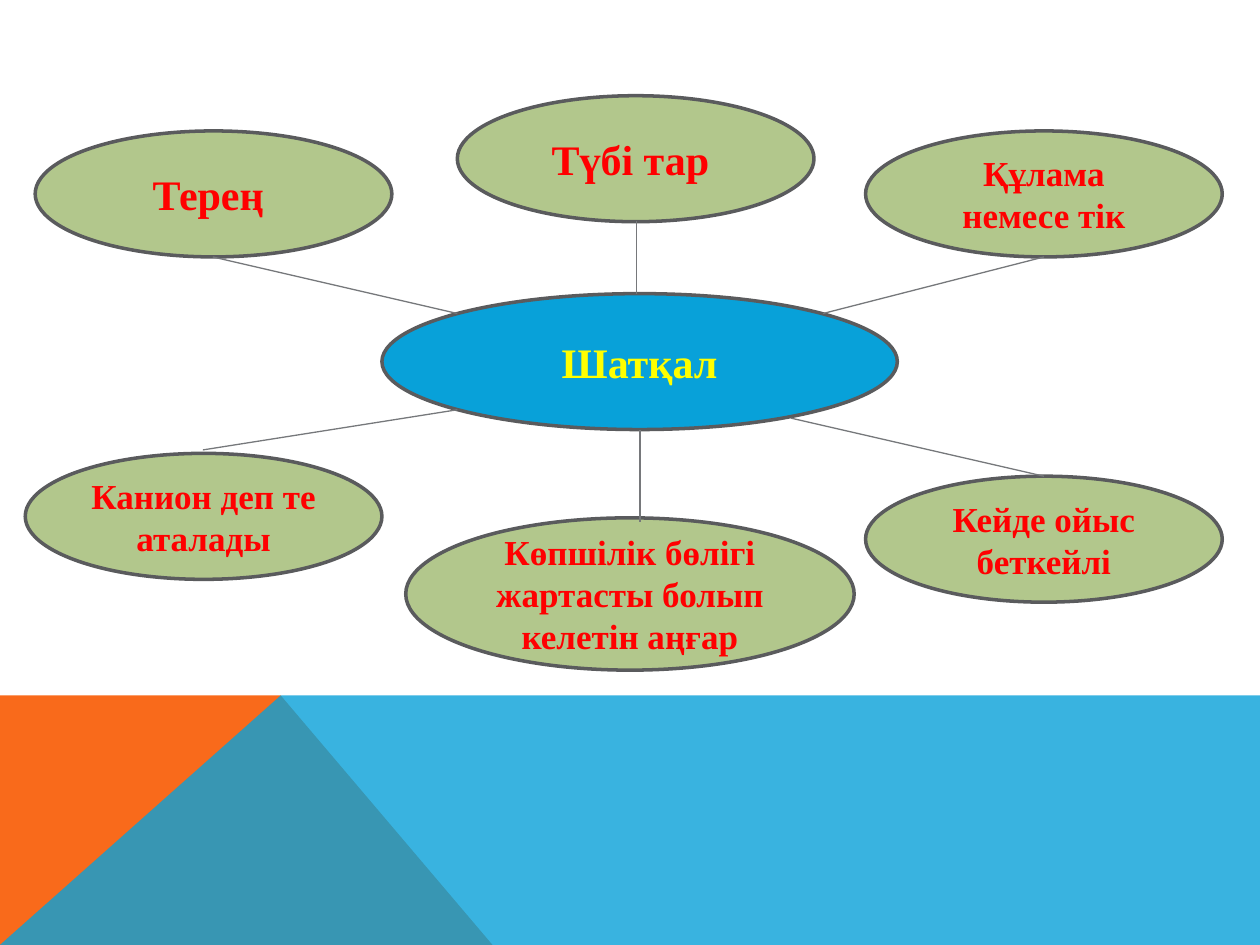
from lxml import etree
from pptx import Presentation
from pptx.dml.color import RGBColor
from pptx.enum.shapes import MSO_CONNECTOR, MSO_SHAPE
from pptx.enum.text import MSO_ANCHOR, MSO_AUTO_SIZE, PP_ALIGN
from pptx.oxml.ns import qn
from pptx.util import Cm, Pt

OVAL = MSO_SHAPE.OVAL
STRAIGHT = MSO_CONNECTOR.STRAIGHT
MIDDLE = MSO_ANCHOR.MIDDLE
CENTER = PP_ALIGN.CENTER
GROW = MSO_AUTO_SIZE.SHAPE_TO_FIT_TEXT

ORANGE = RGBColor(0xF9, 0x6A, 0x1B)
BLUE = RGBColor(0x08, 0xA1, 0xD9)
GREEN = RGBColor(0xB2, 0xC7, 0x8C)
OUTLINE = RGBColor(0x5A, 0x5B, 0x5D)
GRAY = RGBColor(0x76, 0x78, 0x7B)
RED = RGBColor(0xFF, 0x00, 0x00)
YELLOW = RGBColor(0xFF, 0xFF, 0x00)

WIDTH, HEIGHT = 25.4, 19.05
BAND_TOP, PEAK_X = 14.02, 5.66
LEAF_WIDTH, LEAF_HEIGHT = 7.19, 2.54
RIGHT_X, UPPER_Y, LOWER_Y = 17.45, 2.64, 9.6
RIGHT_CENTER = RIGHT_X + LEAF_WIDTH / 2
UPPER_BOTTOM = UPPER_Y + LEAF_HEIGHT


def write(frame, text, size=20, color=RED, font="Times New Roman"):
    frame.word_wrap = True
    paragraph = frame.paragraphs[0]
    paragraph.alignment = CENTER
    run = paragraph.add_run()
    run.text = text
    run.font.name = font
    run.font.size = Pt(size)
    run.font.bold = True
    run.font.color.rgb = color


class ClusterSlide:
    def __init__(self, slide):
        self.shapes = slide.shapes

    def band(self, points, color, opacity=100):
        corners = [(Cm(x), Cm(y)) for x, y in points]
        builder = self.shapes.build_freeform(*corners[0], scale=1.0)
        builder.add_line_segments(corners[1:], close=True)
        band = builder.convert_to_shape()
        band.shadow.inherit = False
        band.fill.solid()
        band.fill.fore_color.rgb = color
        band.line.fill.background()
        if opacity < 100:
            tint = band.fill._xPr.find(qn("a:solidFill"))[0]
            etree.SubElement(tint, qn("a:alpha"), val=str(opacity * 1000))

    def bubble(self, x, y, text="", width=LEAF_WIDTH, height=LEAF_HEIGHT,
               fill=GREEN, **style):
        bubble = self.shapes.add_shape(OVAL, Cm(x), Cm(y), Cm(width), Cm(height))
        bubble.shadow.inherit = False
        bubble.fill.solid()
        bubble.fill.fore_color.rgb = fill
        bubble.line.color.rgb = OUTLINE
        bubble.line.width = Pt(2)
        bubble.text_frame.vertical_anchor = MIDDLE
        if text:
            write(bubble.text_frame, text, **style)
        return bubble

    def label(self, x, y, width, height, text):
        label = self.shapes.add_textbox(Cm(x), Cm(y), Cm(width), Cm(height))
        write(label.text_frame, text)
        label.text_frame.auto_size = GROW

    def spoke(self, start, end, target=None):
        spoke = self.shapes.add_connector(
            STRAIGHT, *(Cm(length) for length in (*start, *end)))
        spoke.line.color.rgb = GRAY
        spoke.line.width = Pt(0.75)
        etree.SubElement(spoke._element.spPr, qn("a:effectLst"))
        if target is not None:
            spoke.end_connect(target, 0)


def main():
    presentation = Presentation()
    presentation.slide_width = Cm(WIDTH)
    presentation.slide_height = Cm(HEIGHT)
    cluster = ClusterSlide(
        presentation.slides.add_slide(presentation.slide_layouts[6]))

    cluster.band([(0, HEIGHT), (0, BAND_TOP), (PEAK_X, BAND_TOP),
                  (9.93, HEIGHT)], ORANGE)
    cluster.band([(0, HEIGHT), (PEAK_X, BAND_TOP), (WIDTH, BAND_TOP),
                  (WIDTH, HEIGHT)], BLUE, opacity=80)

    cluster.bubble(7.7, 5.92, "Шатқал", 10.39, 2.74, BLUE,
                   size=24, color=YELLOW)
    cluster.bubble(0.71, UPPER_Y, "Терең ", size=24)
    cluster.bubble(9.22, 1.93, "Түбі тар ", size=24)
    cluster.bubble(0.51, 9.14, "Канион деп те аталады")
    cluster.bubble(8.18, 10.44, "Көпшілік бөлігі жартасты болып келетін аңғар",
                   9.04, 3.07)
    cluster.bubble(RIGHT_X, UPPER_Y)
    concave_slopes = cluster.bubble(RIGHT_X, LOWER_Y, "Кейде ойыс беткейлі")
    cluster.label(19.05, 2.92, 3.99, 1.96, "Құлама немесе тік")

    cluster.spoke((9.22, 6.32), (4.29, UPPER_BOTTOM))
    cluster.spoke((9.22, 8.26), (4.09, 9.07))
    cluster.spoke((12.9, 8.66), (12.9, 10.52))
    cluster.spoke((15.95, 8.43), (RIGHT_CENTER, LOWER_Y), concave_slopes)
    cluster.spoke((12.83, 5.92), (12.83, 4.45))
    cluster.spoke((16.59, 6.32), (RIGHT_CENTER, UPPER_BOTTOM))

    presentation.save("out.pptx")


if __name__ == "__main__":
    main()
